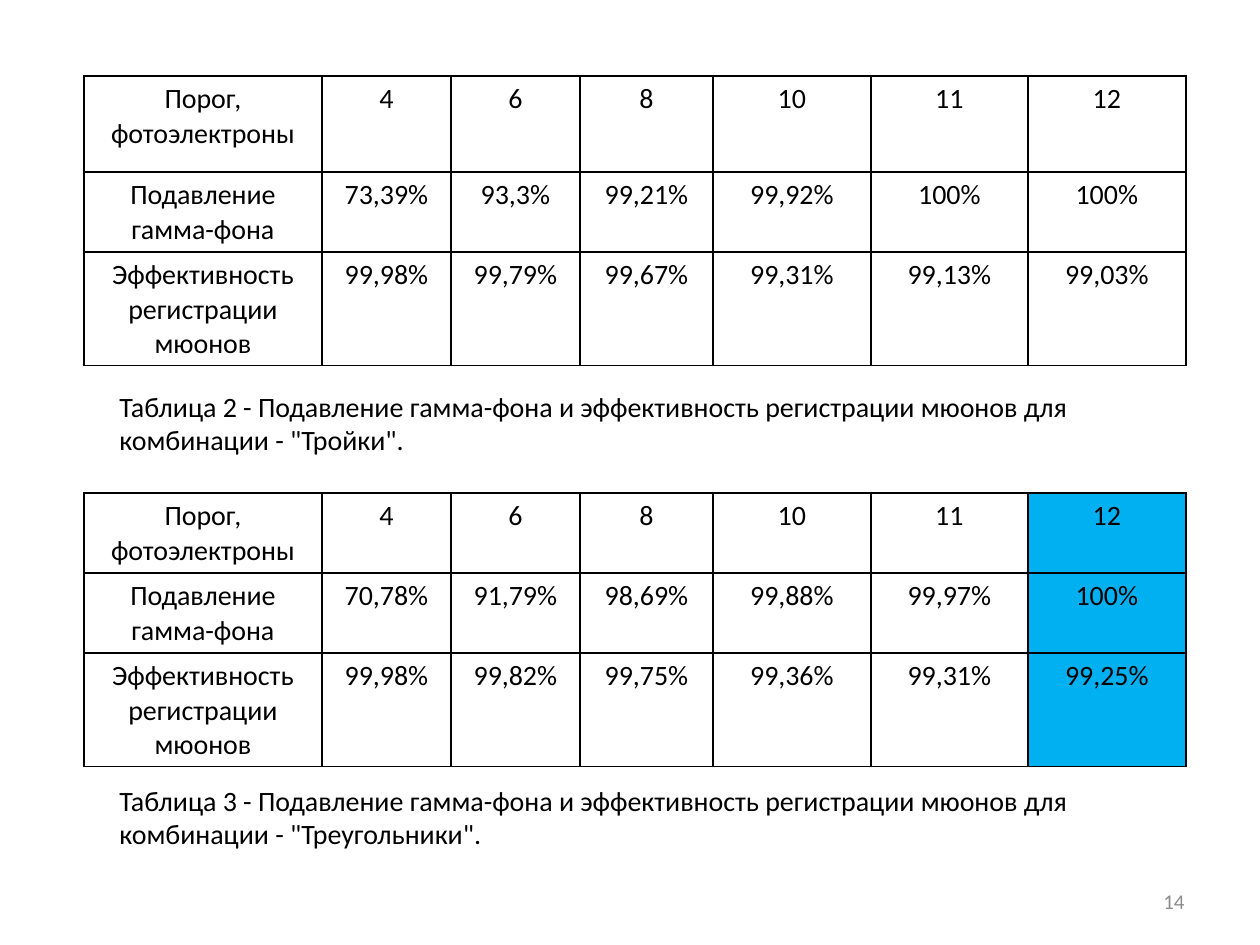
from lxml import etree
from pptx import Presentation
from pptx.dml.color import RGBColor
from pptx.enum.text import MSO_ANCHOR, PP_ALIGN
from pptx.oxml.ns import qn
from pptx.util import Emu, Pt

LEFT, CENTER, RIGHT = PP_ALIGN.LEFT, PP_ALIGN.CENTER, PP_ALIGN.RIGHT
TOP, MIDDLE = MSO_ANCHOR.TOP, MSO_ANCHOR.MIDDLE

EMU_PER_PX = 914400 // 126
BLACK, GREY, HIGHLIGHT = "000000", "8C8C8C", "00B0F0"

TABLE_LEFT = 84
COLUMN_WIDTHS = [238, 129, 129, 133, 158, 157, 158]
ROW_LABELS = [
    "Порог, фотоэлектроны",
    "Подавление гамма-фона",
    "Эффективность регистрации мюонов",
]
THRESHOLDS = ["4", "6", "8", "10", "11", "12"]

TRIPLES = [
    THRESHOLDS,
    ["73,39%", "93,3%", "99,21%", "99,92%", "100%", "100%"],
    ["99,98%", "99,79%", "99,67%", "99,31%", "99,13%", "99,03%"],
]
TRIANGLES = [
    THRESHOLDS,
    ["70,78%", "91,79%", "98,69%", "99,88%", "99,97%", "100%"],
    ["99,98%", "99,82%", "99,75%", "99,36%", "99,31%", "99,25%"],
]
CAPTION = "Таблица {} - Подавление гамма-фона и эффективность регистрации мюонов для комбинации - \"{}\"."


def px(length):
    return Emu(length * EMU_PER_PX)


def color(hex_string):
    return RGBColor.from_string(hex_string)


class SlideBuilder:
    """Holds the text style and the slide being filled."""

    font_name = "Calibri"
    font_size = 16

    def __init__(self, slide):
        self.slide = slide

    def add_text(self, text_frame, text, align=LEFT, size=font_size, text_color=BLACK):
        paragraph = text_frame.paragraphs[0]
        paragraph.alignment = align
        run = paragraph.add_run()
        run.text = text
        run.font.name = self.font_name
        run.font.size = Pt(size)
        run.font.color.rgb = color(text_color)

    def text_box(self, left, top, width, height, text, anchor=TOP, **style):
        shape = self.slide.shapes.add_textbox(px(left), px(top), px(width), px(height))
        shape.text_frame.word_wrap = True
        shape.text_frame.vertical_anchor = anchor
        self.add_text(shape.text_frame, text, **style)

    def border(self, cell):
        """Draws a thin black line on all four sides; must precede the fill."""
        properties = cell._tc.get_or_add_tcPr()
        for side in ("a:lnL", "a:lnR", "a:lnT", "a:lnB"):
            line = etree.SubElement(properties, qn(side), w=str(Pt(1)))
            fill = etree.SubElement(line, qn("a:solidFill"))
            etree.SubElement(fill, qn("a:srgbClr"), val=BLACK)

    def table(self, top, row_heights, values, highlighted_column=None):
        frame = self.slide.shapes.add_table(
            len(row_heights), len(COLUMN_WIDTHS), px(TABLE_LEFT), px(top),
            px(sum(COLUMN_WIDTHS)), px(sum(row_heights)))
        table = frame.table
        table.first_row = table.horz_banding = False
        for column, width in zip(table.columns, COLUMN_WIDTHS):
            column.width = px(width)
        for row, height, label, row_values in zip(table.rows, row_heights, ROW_LABELS, values):
            row.height = px(height)
            for index, (cell, text) in enumerate(zip(row.cells, [label] + row_values)):
                self.add_text(cell.text_frame, text, align=CENTER)
                self.border(cell)
                if index == highlighted_column:
                    cell.fill.solid()
                    cell.fill.fore_color.rgb = color(HIGHLIGHT)
                else:
                    cell.fill.background()


def main():
    presentation = Presentation()
    presentation.slide_width, presentation.slide_height = px(1260), px(945)
    builder = SlideBuilder(presentation.slides.add_slide(presentation.slide_layouts[6]))

    for top, number, name in ((383, 2, "Тройки"), (777, 3, "Треугольники")):
        builder.text_box(107, top, 1081, 81, CAPTION.format(number, name))
    builder.text_box(903, 876, 294, 50, "14", anchor=MIDDLE,
                     align=RIGHT, size=12, text_color=GREY)
    builder.table(76, [96, 80, 113], TRIPLES)
    builder.table(493, [80, 80, 113], TRIANGLES, highlighted_column=len(THRESHOLDS))

    presentation.save("out.pptx")


if __name__ == "__main__":
    main()
